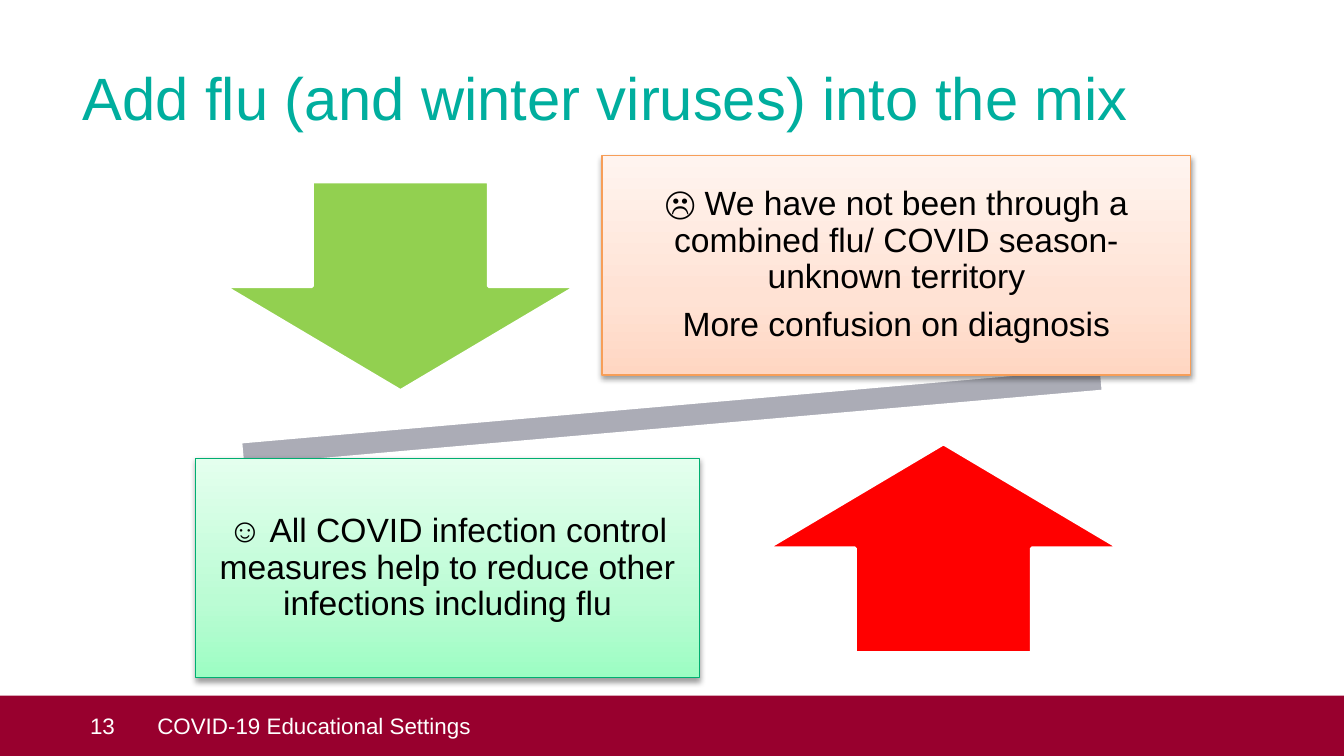
import copy

import pptx
import pptx.dml.color
import pptx.enum.shapes
import pptx.enum.text
import pptx.oxml
import pptx.oxml.ns
import pptx.util

Pt = pptx.util.Pt
Inches = pptx.util.Inches
RGB = pptx.dml.color.RGBColor
Kind = pptx.enum.shapes.MSO_SHAPE
Align = pptx.enum.text.PP_ALIGN

TEAL = RGB(0x00, 0xAE, 0x9E)
GREY = RGB(0xAB, 0xAC, 0xB6)
LIME = RGB(0x92, 0xD0, 0x50)
RED = RGB(0xFF, 0x00, 0x00)
WINE = RGB(0x98, 0x00, 0x2E)
WHITE = RGB(0xFF, 0xFF, 0xFF)
BLACK = RGB(0x00, 0x00, 0x00)
AMBER = RGB(0xF7, 0x9E, 0x58)
PEACH = [RGB(0xFF, 0xD6, 0xC2), RGB(0xFF, 0xE2, 0xD4), RGB(0xFF, 0xF4, 0xEF)]
GREEN = RGB(0x00, 0xAE, 0x71)
MINT = [RGB(0x9C, 0xFD, 0xC3), RGB(0xBB, 0xFC, 0xD4), RGB(0xE4, 0xFF, 0xEE)]

SHADOW = (
    '<a:outerShdw %s blurRad="%d" dist="%d" dir="5400000" rotWithShape="0">'
    '<a:srgbClr val="000000"><a:alpha val="38000"/></a:srgbClr></a:outerShdw>'
    % (pptx.oxml.ns.nsdecls("a"), Pt(3.1), Pt(1.6))
)

deck = pptx.Presentation()
deck.slide_width = Inches(10)
deck.slide_height = deck.slide_width * 9 // 16
slide = deck.slides.add_slide(deck.slide_layouts[5])


def place(left, top, width, height):
    """Turn percentages of the slide's size into lengths."""
    col, row = deck.slide_width / 100, deck.slide_height / 100
    return [round(n) for n in (left * col, top * row, width * col, height * row)]


def write(shape, *lines, size=18, color=BLACK, align=Align.LEFT,
          left=0, pad=0, gap=0, pitch=1):
    frame = shape.text_frame
    frame.word_wrap = True
    frame.auto_size = pptx.enum.text.MSO_AUTO_SIZE.NONE
    frame.vertical_anchor = pptx.enum.text.MSO_ANCHOR.MIDDLE
    frame.margin_left = Inches(left or pad)
    frame.margin_top = frame.margin_right = frame.margin_bottom = Inches(pad)
    frame.text = "\n".join(lines)
    for para in frame.paragraphs:
        para.alignment = align
        para.line_spacing = pitch
        para.space_after = Pt(gap)
        font = para.runs[0].font
        font.name, font.size, font.color.rgb = "Arial", Pt(size), color


title = slide.shapes.title
title.left, title.top, title.width, title.height = place(6.15, 8.1, 87.8, 9.4)
write(title, "Add flu (and winter viruses) into the mix", size=32, color=TEAL)

# Tilted beam, then an arrow and a card on each side of it
pieces = [
    (Kind.MATH_MINUS, (6.25, 48, 87.5, 14.22), GREY, -5),
    (Kind.DOWN_ARROW, (16.65, 24, 26.3, 27.73), LIME, 0),
    (Kind.UP_ARROW, (57.05, 58.67, 26.3, 27.73), RED, 0),
]
for kind, box, color, turn in pieces:
    piece = slide.shapes.add_shape(kind, *place(*box))
    piece.shadow.inherit = False
    piece.rotation = turn
    piece.fill.solid()
    piece.fill.fore_color.rgb = color
    piece.line.color.rgb = WHITE
    piece.line.width = Pt(2)

cards = [
    ((44.8, 20.6, 43.8, 29), PEACH, AMBER, [
        "☹ We have not been through a combined flu/ COVID season-unknown territory",
        "More confusion on diagnosis",
    ]),
    ((14.55, 60.65, 37.5, 29), MINT, GREEN, [
        "☺ All COVID infection control measures help to reduce other "
        "infections including flu",
    ]),
]
for box, shades, edge, lines in cards:
    card = slide.shapes.add_shape(Kind.RECTANGLE, *place(*box))
    card.line.color.rgb = edge
    card.line.width = Pt(0.75)
    card.fill.gradient()
    card.fill.gradient_angle = 90
    stops = card._element.spPr.find(".//" + pptx.oxml.ns.qn("a:gsLst"))
    stops.append(copy.deepcopy(stops[-1]))
    for stop, share, shade in zip(card.fill.gradient_stops, (0, 0.35, 1), shades):
        stop.position = share
        stop.color.rgb = shade
    card.shadow.inherit = False
    effects = card._element.spPr.find(pptx.oxml.ns.qn("a:effectLst"))
    effects.append(pptx.oxml.parse_xml(SHADOW))
    write(card, *lines, align=Align.CENTER, pad=0.14, gap=6.3, pitch=0.9)

band = slide.shapes.add_shape(Kind.RECTANGLE, *place(0, 92, 100, 8))
band.shadow.inherit = False
band.fill.solid()
band.fill.fore_color.rgb = WINE
band.line.fill.background()
write(band, "13", size=12, color=WHITE, left=0.67)

foot = slide.shapes.add_textbox(*place(9.8, 92, 88.2, 8))
write(foot, "COVID-19 Educational Settings", size=12, color=WHITE, left=0.19)

deck.save("out.pptx")
